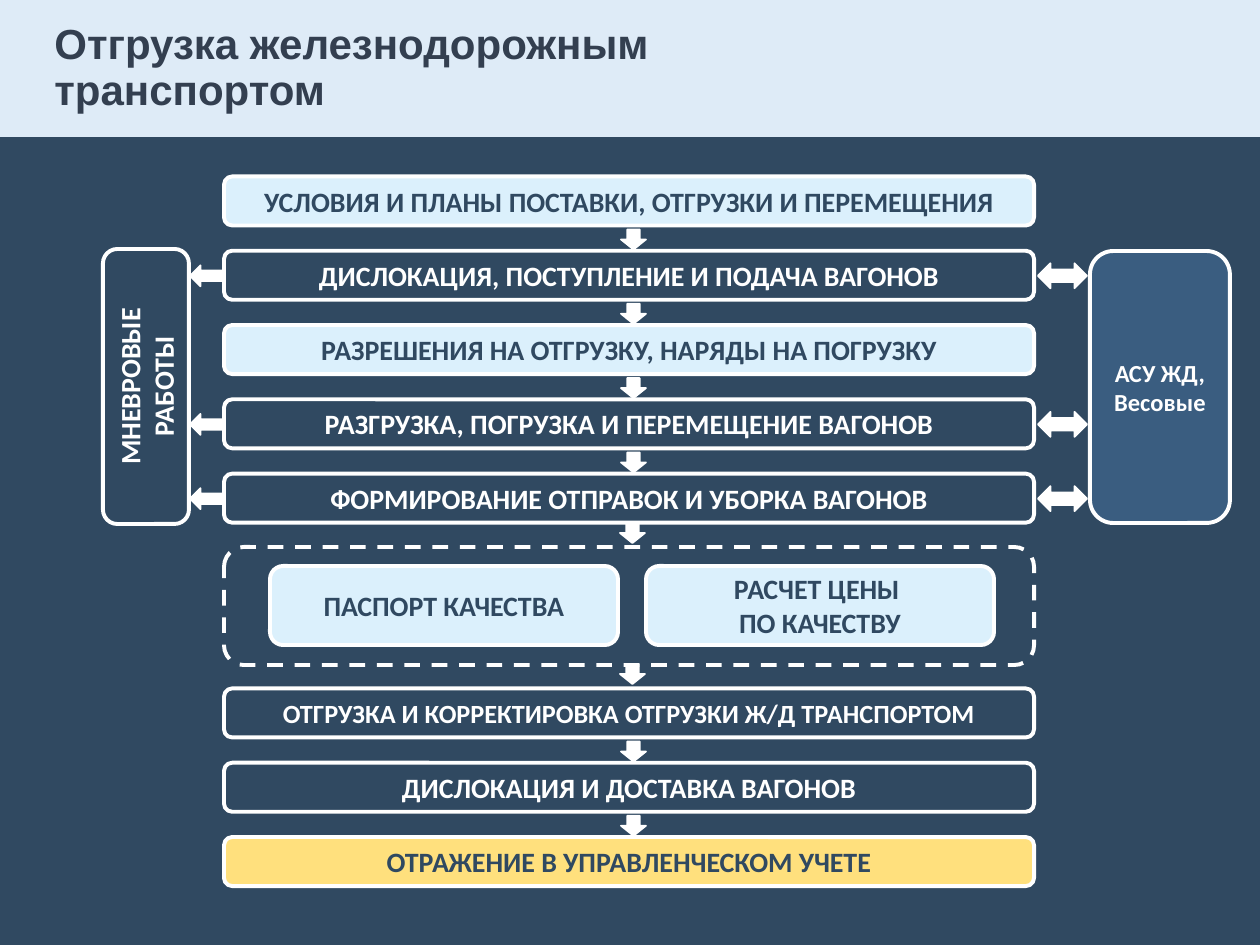
from pptx import Presentation
from pptx import util as u
from pptx.dml.color import RGBColor
from pptx.enum import dml, shapes, text

PX = 914400 / 126
COLORS = {
    "navy": "304961", "steel": "3A5D80", "pale": "DBF0FC", "yellow": "FFE07D",
    "header": "DEEBF7", "title": "333F50", "white": "FFFFFF",
}
TITLE = "Отгрузка железнодорожным транспортом"
# text, fill, text colour, text size
UPPER_STEPS = [
    ("УСЛОВИЯ И ПЛАНЫ ПОСТАВКИ, ОТГРУЗКИ И ПЕРЕМЕЩЕНИЯ", "pale", "navy", 16),
    ("ДИСЛОКАЦИЯ, ПОСТУПЛЕНИЕ И ПОДАЧА ВАГОНОВ", "navy", "white", 16),
    ("РАЗРЕШЕНИЯ НА ОТГРУЗКУ, НАРЯДЫ НА ПОГРУЗКУ", "pale", "navy", 16),
    ("РАЗГРУЗКА, ПОГРУЗКА И ПЕРЕМЕЩЕНИЕ ВАГОНОВ", "navy", "white", 16),
    ("ФОРМИРОВАНИЕ ОТПРАВОК И УБОРКА ВАГОНОВ", "navy", "white", 16),
]
LOWER_STEPS = [
    ("ОТГРУЗКА И КОРРЕКТИРОВКА ОТГРУЗКИ Ж/Д ТРАНСПОРТОМ", "navy", "white", 15),
    ("ДИСЛОКАЦИЯ И ДОСТАВКА ВАГОНОВ", "navy", "white", 16),
    ("ОТРАЖЕНИЕ В УПРАВЛЕНЧЕСКОМ УЧЕТЕ", "yellow", "navy", 16),
]
QUALITY = ["ПАСПОРТ КАЧЕСТВА", "РАСЧЕТ ЦЕНЫ \nПО КАЧЕСТВУ"]
MANOEUVRES = "МНЕВРОВЫЕ РАБОТЫ"
SYSTEMS = "АСУ ЖД, Весовые"
LINKED_ROWS = (1, 3, 4)

STEP_LEFT, STEP_WIDTH, STEP_HEIGHT, PITCH = 224, 810, 49, 74.3
UPPER_TOP, LOWER_TOP = 176.5, 688.5
GROUP_TOP, GROUP_HEIGHT = 547, 118
KIND = shapes.MSO_SHAPE

deck = Presentation()
deck.slide_width, deck.slide_height = u.Inches(10), u.Inches(7.5)
page = deck.slides.add_slide(deck.slide_layouts[6])


def rgb(name):
    return RGBColor.from_string(COLORS[name])


def emu(*lengths):
    return [round(length * PX) for length in lengths]


def add_shape(kind, place, fill=None, line="white", weight=2.25):
    shape = page.shapes.add_shape(kind, *emu(*place))
    shape.shadow.inherit = False
    if fill:
        shape.fill.solid()
        shape.fill.fore_color.rgb = rgb(fill)
    else:
        shape.fill.background()
    if line:
        shape.line.color.rgb = rgb(line)
        shape.line.width = u.Pt(weight)
    else:
        shape.line.fill.background()
    return shape


def write(shape, words, color, size, font="Calibri", align=text.PP_ALIGN.CENTER, spacing=None):
    frame = shape.text_frame
    frame.word_wrap = True
    frame.vertical_anchor = text.MSO_ANCHOR.MIDDLE
    frame.text = words
    for para in frame.paragraphs:
        para.alignment = align
        para.line_spacing = spacing
        for span in para.runs:
            style = {"name": font, "size": u.Pt(size), "bold": True}
            for key, value in style.items():
                setattr(span.font, key, value)
            span.font.color.rgb = rgb(color)


def add_box(place, words, fill, color, size):
    box = add_shape(KIND.ROUNDED_RECTANGLE, place, fill)
    write(box, words, color, size)
    return box


def add_arrow(kind, *place):
    add_shape(kind, place, "white", weight=1)


page.background.fill.solid()
page.background.fill.fore_color.rgb = rgb("navy")
add_shape(KIND.RECTANGLE, (0, 0, 1260, 137), "header", line=None)
heading = page.shapes.add_textbox(*emu(42, 20, 764, 98))
write(heading, TITLE, "title", 24, "Arial", text.PP_ALIGN.LEFT, 0.9)

for first_top, steps in ((UPPER_TOP, UPPER_STEPS), (LOWER_TOP, LOWER_STEPS)):
    for row, (words, *look) in enumerate(steps):
        top = first_top + PITCH * row
        add_box((STEP_LEFT, top, STEP_WIDTH, STEP_HEIGHT), words, *look)
        if row < len(steps) - 1:
            add_arrow(KIND.DOWN_ARROW, 621, top + STEP_HEIGHT + 4, 25, 20)

group = add_shape(KIND.ROUNDED_RECTANGLE, (STEP_LEFT, GROUP_TOP, STEP_WIDTH, GROUP_HEIGHT))
group.line.dash_style = dml.MSO_LINE.DASH
for column, words in enumerate(QUALITY):
    add_box((270 + 376 * column, GROUP_TOP + 19, 348, 79), words, "pale", "navy", 16)
for top in (GROUP_TOP - 24, GROUP_TOP + GROUP_HEIGHT - 1):
    add_arrow(KIND.DOWN_ARROW, 620, top, 25, 20)

side = add_box((103, 249, 86, 275), MANOEUVRES, "navy", "white", 16)
side.text_frame._txBody.bodyPr.set("vert", "vert270")
add_box((1090, 251, 140, 272), SYSTEMS, "steel", "white", 14)
for row in LINKED_ROWS:
    middle = UPPER_TOP + PITCH * row + STEP_HEIGHT / 2
    add_arrow(KIND.LEFT_ARROW, 190, middle - 10, 34, 21)
    add_arrow(KIND.LEFT_RIGHT_ARROW, 1038, middle - 12, 49, 25)

deck.save("out.pptx")
